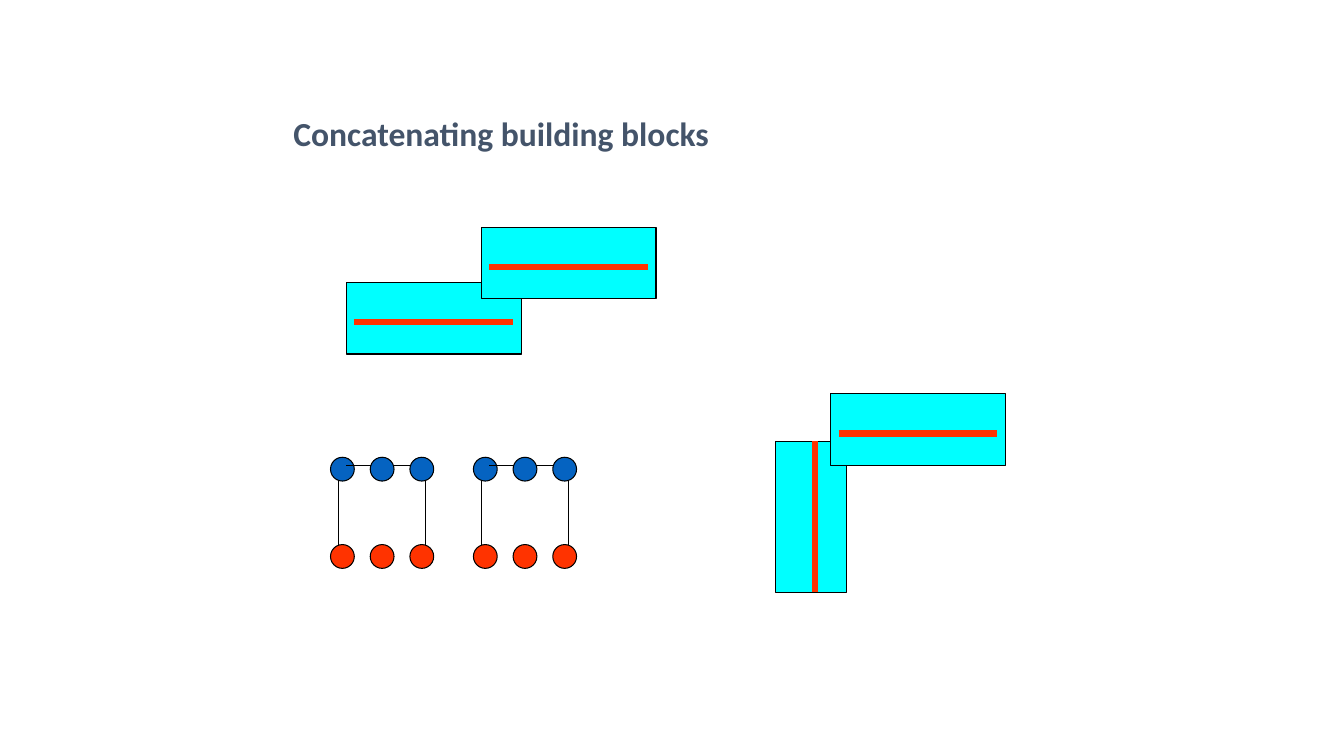
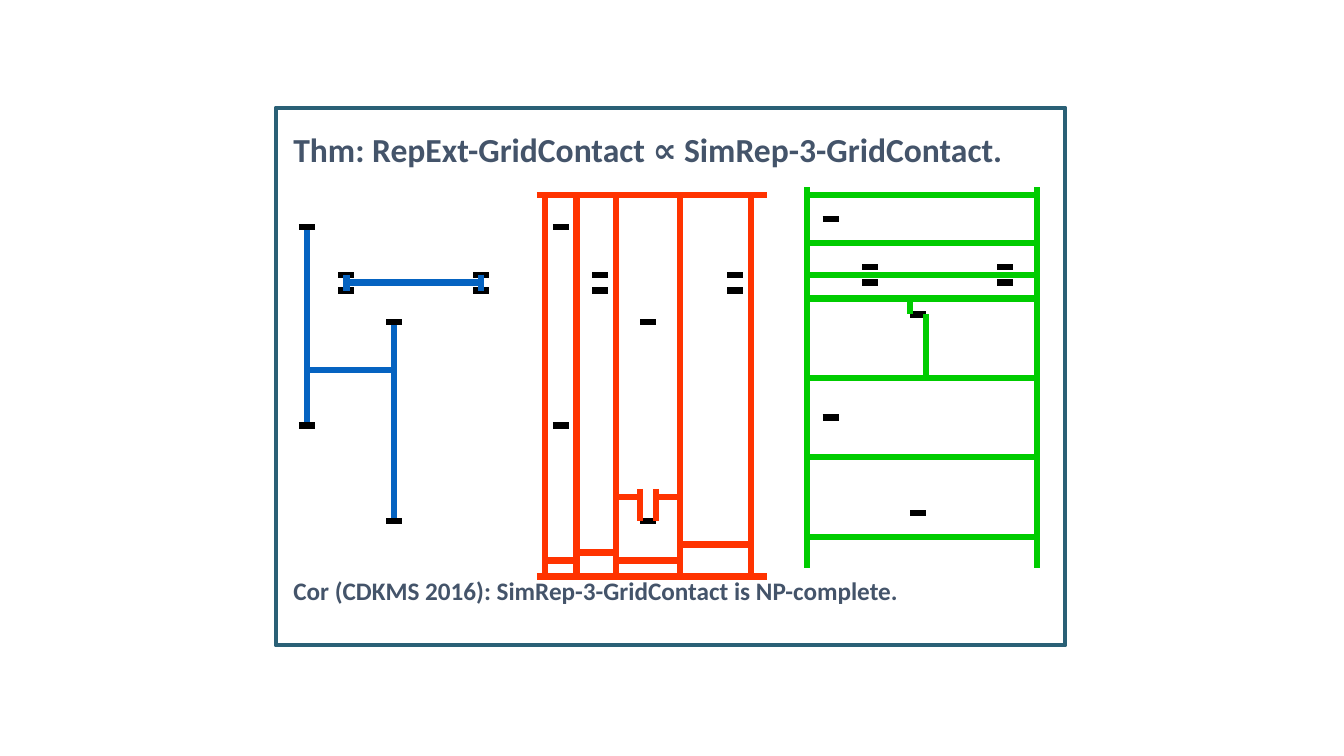
from pptx import Presentation
from pptx.dml.color import RGBColor
from pptx.enum.shapes import MSO_CONNECTOR, MSO_SHAPE
from pptx.enum.text import MSO_ANCHOR, MSO_AUTO_SIZE, PP_ALIGN
from pptx.oxml.ns import qn
from pptx.util import Pt
from lxml.etree import SubElement

HUES = {"text": "44546A", "frame": "2A6076", "block": "00FFFF", "red": "FF3300",
        "blue": "0563C1", "green": "00CC00", "black": "000000", "white": "FFFFFF"}
COLORS = {name: RGBColor.from_string(code) for name, code in HUES.items()}
UNIT, LEFT, TOP = 5.67, 219.1, 162.2
THICK, THIN = 4.5, 0.75

deck = Presentation()
deck.slide_width, deck.slide_height = Pt(960), Pt(540)


def draw(slide, kind, col, row, wide, high, fill):
    shape = slide.shapes.add_shape(kind, Pt(LEFT + col * UNIT), Pt(TOP + row * UNIT),
                                   Pt(wide * UNIT), Pt(high * UNIT))
    shape.shadow.inherit = False
    shape.fill.solid()
    shape.fill.fore_color.rgb = COLORS[fill]
    shape.line.color.rgb = COLORS["black"]
    shape.line.width = Pt(THIN)
    return shape


def join(slide, lines, color, width=THICK):
    for x1, y1, x2, y2 in lines:
        line = slide.shapes.add_connector(
            MSO_CONNECTOR.STRAIGHT, Pt(LEFT + x1 * UNIT), Pt(TOP + y1 * UNIT),
            Pt(LEFT + x2 * UNIT), Pt(TOP + y2 * UNIT))
        line.line.color.rgb = COLORS[color]
        line.line.width = Pt(width)
        SubElement(line._element.spPr, qn("a:effectLst"))


blocks = deck.slides.add_slide(deck.slide_layouts[5])
proof = deck.slides.add_slide(deck.slide_layouts[1])

texts = [
    (blocks.shapes.title, "Concatenating building blocks", 77, 24),
    (proof.shapes.title, "Thm: RepExt-GridContact ∝ SimRep-3-GridContact.", 88.5, 24),
    (proof.placeholders[1], "Cor (CDKMS 2016): SimRep-3-GridContact is NP-complete.", 407.5, 18),
]
for holder, words, top, size in texts:
    holder.left, holder.top, holder.width, holder.height = Pt(202.3), Pt(top), Pt(545), Pt(40)
    frame = holder.text_frame
    frame.text = words
    frame.word_wrap = True
    frame.auto_size = MSO_AUTO_SIZE.NONE
    frame.vertical_anchor = MSO_ANCHOR.TOP
    para = frame.paragraphs[0]
    para.alignment = PP_ALIGN.LEFT
    para.space_before = Pt(0)
    props = para._p.get_or_add_pPr()
    props.set("marL", "0")
    props.set("indent", "0")
    SubElement(props, qn("a:buNone"))
    font = para.runs[0].font
    font.name, font.size, font.bold = "Calibri", Pt(size), True
    font.color.rgb = COLORS["text"]

draw(blocks, MSO_SHAPE.RECTANGLE, 59, 27, 9, 19, "block")
join(blocks, [(64, 27, 64, 46)], "red")
for col, row in [(66, 21), (5, 7), (22, 0)]:
    draw(blocks, MSO_SHAPE.RECTANGLE, col, row, 22, 9, "block")
    join(blocks, [(col + 1, row + 5, col + 21, row + 5)], "red")

for col in (3, 21):
    for step in (0, 5, 10):
        draw(blocks, MSO_SHAPE.OVAL, col + step, 40, 3, 3, "red")
    for step in (0, 10):
        draw(blocks, MSO_SHAPE.OVAL, col + step, 29, 3, 3, "blue")
    join(blocks, [(col + 1, 40, col + 1, 32), (col + 12, 40, col + 12, 32),
                  (col + 2, 30, col + 10, 30)], "black", THIN)
    draw(blocks, MSO_SHAPE.OVAL, col + 5, 29, 3, 3, "blue")

border = draw(proof, MSO_SHAPE.RECTANGLE, 0, 0, 1, 1, "white")
border.left, border.top, border.width, border.height = Pt(197), Pt(77), Pt(564), Pt(384)
border.line.color.rgb = COLORS["frame"]
border.line.width = Pt(3)
proof.shapes.title._element.addprevious(border._element)

join(proof, [(0, 0, 0, 25), (11, 12, 11, 37), (5, 7, 22, 7)], "blue")
marks = [(0, 0), (0, 25), (11, 12), (11, 37), (22, 6), (22, 8), (5, 6), (5, 8)]
for right, down in [(0, 0), (32, 0), (66, -1)]:
    join(proof, [(col + right - 1, row + down, col + right + 1, row + down)
                 for col, row in marks], "black")
join(proof, [(22, 6, 22, 8), (5, 6, 5, 8), (0, 18, 11, 18)], "blue")

join(proof, [(col, -4, col, 44) for col in (30, 34, 39, 47, 56)], "red")
join(proof, [(29, row, 58, row) for row in (44, -4)], "red")
join(proof, [(30, 42, 34, 42), (34, 41, 39, 41), (39, 42, 47, 42), (47, 40, 56, 40),
             (39, 34, 42, 34), (44, 34, 47, 34), (42, 33, 42, 37), (44, 33, 44, 37)], "red")

join(proof, [(63, row, 92, row) for row in (-4, 2, 6, 9, 19, 29, 39)], "green")
join(proof, [(col, -5, col, 43) for col in (63, 92)], "green")
join(proof, [(76, 9, 76, 11), (78, 11, 78, 19)], "green")

deck.save("out.pptx")
